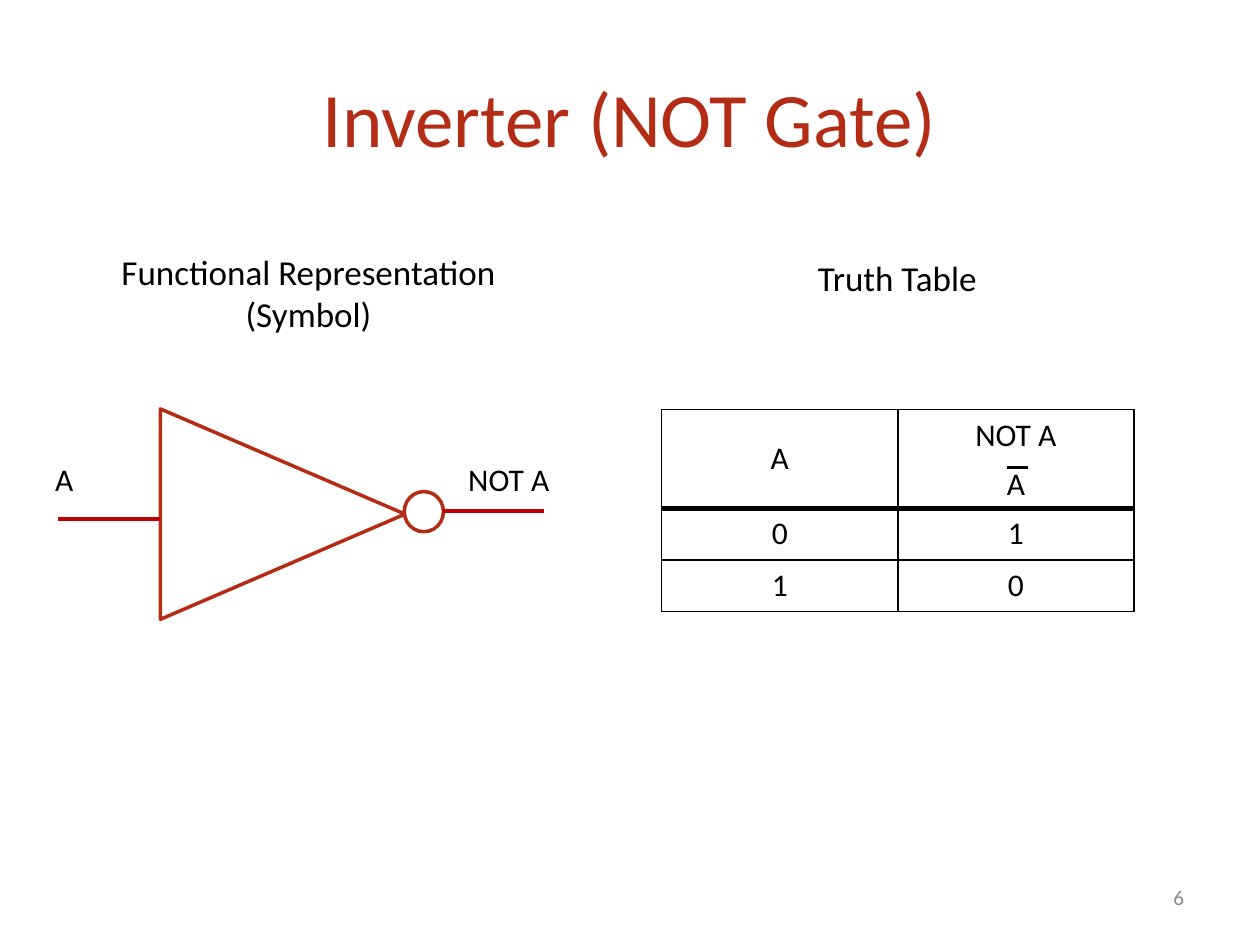
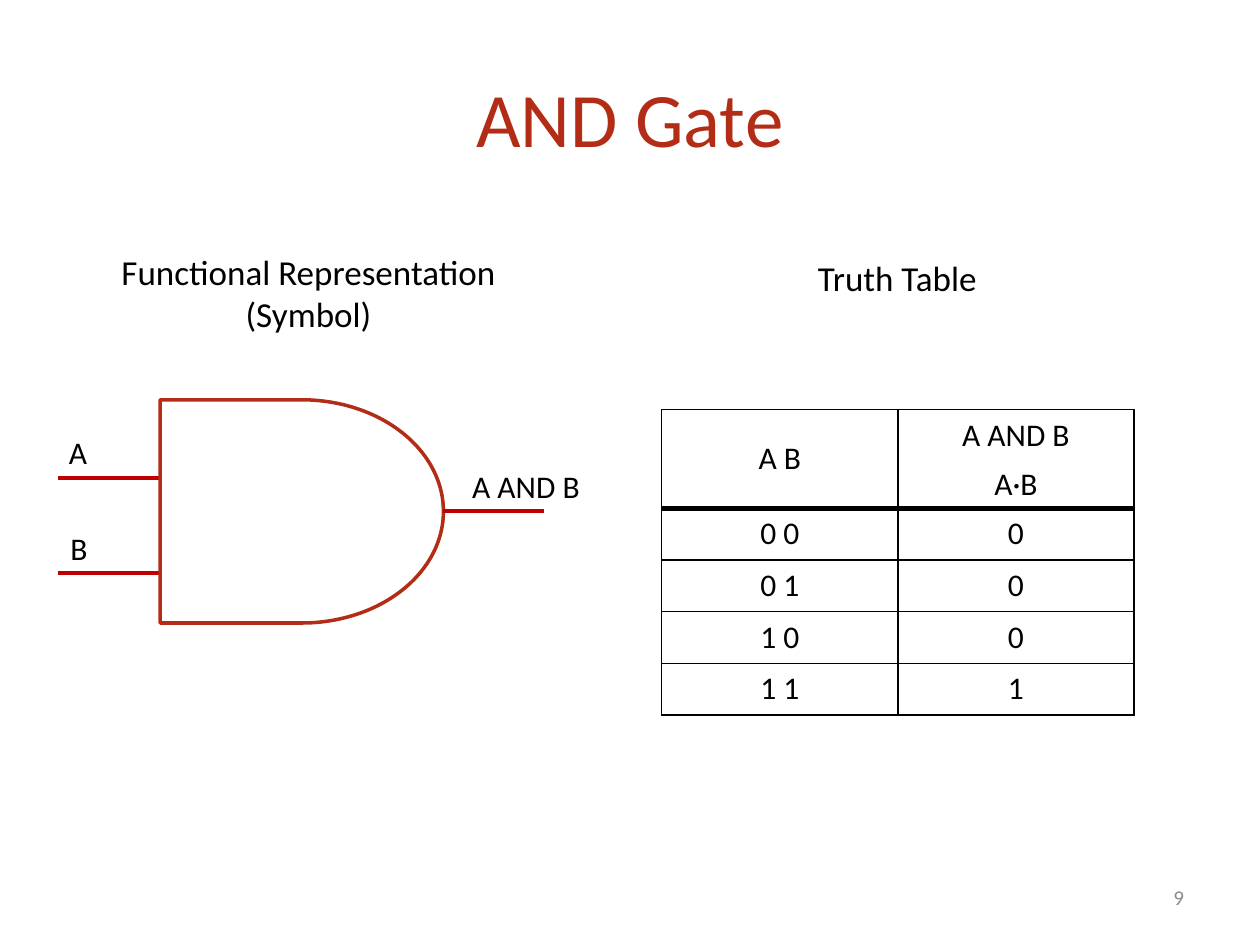
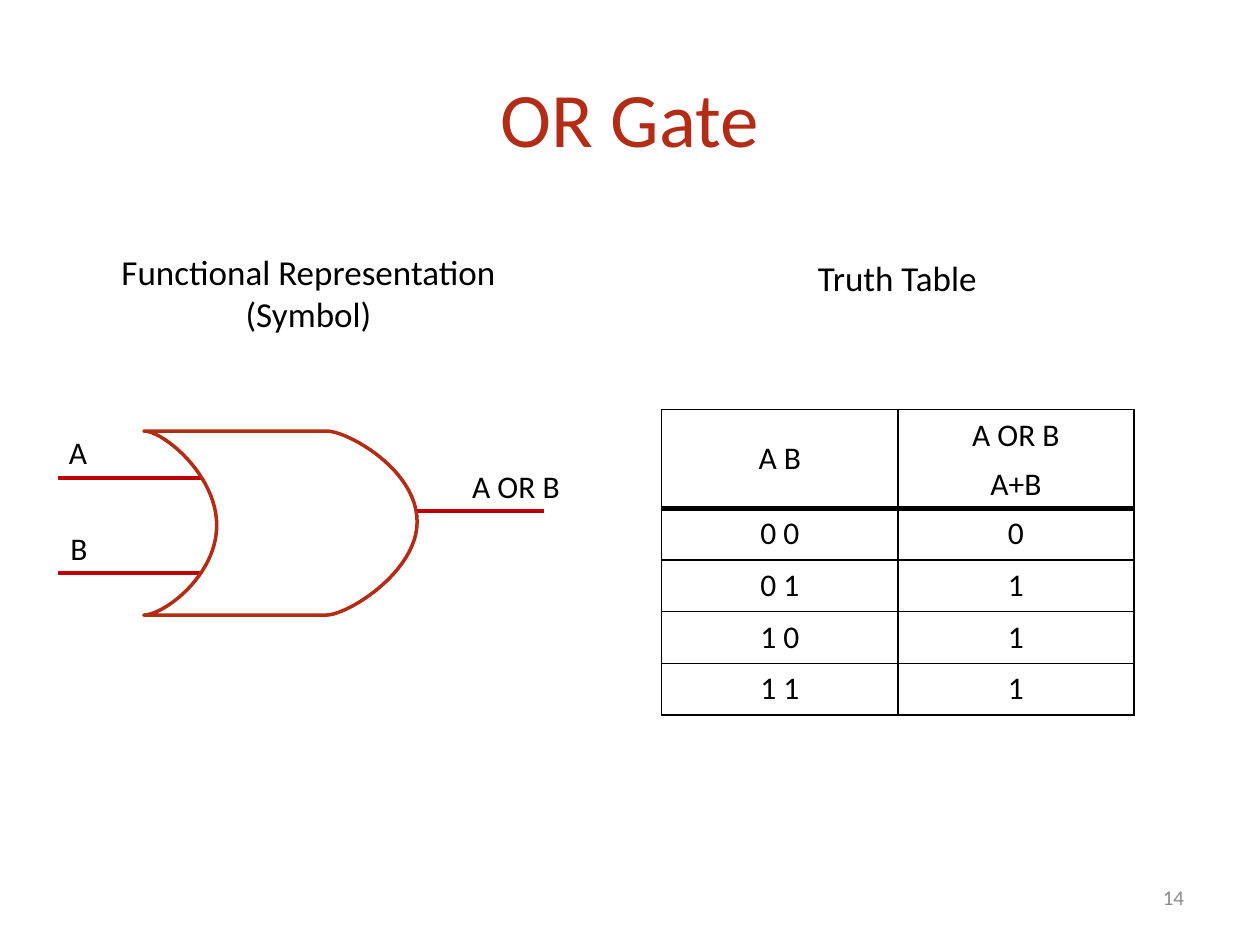
"""Build three slides that show the NOT, AND and OR gates with their truth tables."""
from lxml import etree
from pptx import Presentation
from pptx.dml.color import RGBColor
from pptx.enum.shapes import MSO_CONNECTOR, MSO_SHAPE
from pptx.enum.text import MSO_ANCHOR, PP_ALIGN
from pptx.oxml.ns import qn
from pptx.util import Cm, Pt

STRAIGHT = MSO_CONNECTOR.STRAIGHT
TRIANGLE = MSO_SHAPE.ISOSCELES_TRIANGLE
BUBBLE = MSO_SHAPE.OVAL
DELAY = MSO_SHAPE.FLOWCHART_DELAY
LEFT, CENTER, RIGHT = PP_ALIGN.LEFT, PP_ALIGN.CENTER, PP_ALIGN.RIGHT
TOP, MIDDLE = MSO_ANCHOR.TOP, MSO_ANCHOR.MIDDLE

GATE_RED = RGBColor(0xB3, 0x2C, 0x16)
WIRE_RED = RGBColor(0xC0, 0x00, 0x00)
BLACK = RGBColor(0x00, 0x00, 0x00)
WHITE = RGBColor(0xFF, 0xFF, 0xFF)
GRAY = RGBColor(0x8C, 0x8C, 0x8C)
FONT = "Calibri"

TITLE_ONLY = 5
TABLE_LEFT, TABLE_TOP = 13.34, 8.26
COLUMN_WIDTH, HEADER_HEIGHT, ROW_HEIGHT = 4.76, 1.99, 1.04
INPUT_START, BODY_LEFT = 1.17, 3.23
BODY_RIGHT, OUTPUT_END = 8.94, 10.97
OUTPUT_Y = 10.31
INPUTS = [("A", 1.14, 8.61, 9.63), ("B", 1.17, 10.54, 11.56)]
INPUT_PAIRS = ["0 0", "0 1", "1 0", "1 1"]


def format_text(frame, size, color=BLACK, align=CENTER, space_after=0):
    """Give every paragraph of a text frame the same look."""
    for paragraph in frame.paragraphs:
        paragraph.alignment = align
        paragraph.space_after = Pt(space_after)
        for run in paragraph.runs:
            run.font.name = FONT
            run.font.size = Pt(size)
            run.font.color.rgb = color


def add_label(slide, text, left, top, width, height=1.01, size=18,
              color=BLACK, align=LEFT, anchor=TOP):
    """Add a wrapped text box."""
    frame = slide.shapes.add_textbox(Cm(left), Cm(top), Cm(width), Cm(height)).text_frame
    frame.word_wrap = True
    frame.vertical_anchor = anchor
    frame.text = text
    format_text(frame, size, color, align)


def add_line(slide, start, end, y, color=WIRE_RED, weight=2.25):
    """Add a horizontal line without a shadow."""
    line = slide.shapes.add_connector(STRAIGHT, Cm(start), Cm(y), Cm(end), Cm(y))
    line.line.color.rgb = color
    line.line.width = Pt(weight)
    etree.SubElement(line._element.spPr, qn("a:effectLst"))
    return line


def style_gate(part):
    """Give a gate part its white fill and red outline."""
    part.shadow.inherit = False
    part.fill.solid()
    part.fill.fore_color.rgb = WHITE
    part.line.color.rgb = GATE_RED
    part.line.width = Pt(2)


def add_gate_part(slide, kind, left, top, width, height):
    """Add a preset shape as part of a gate symbol."""
    part = slide.shapes.add_shape(kind, Cm(left), Cm(top), Cm(width), Cm(height))
    style_gate(part)
    return part


def curve(p0, p1, p2, p3, steps=24):
    """Return points along a cubic curve, without its first point."""
    points = []
    for step in range(1, steps + 1):
        t = step / steps
        weights = ((1 - t) ** 3, 3 * t * (1 - t) ** 2, 3 * t ** 2 * (1 - t), t ** 3)
        points.append(tuple(
            Cm(sum(w * p[axis] for w, p in zip(weights, (p0, p1, p2, p3))))
            for axis in (0, 1)))
    return points


def set_borders(cell, top, bottom):
    """Draw black cell borders, with the top and bottom weights given in points."""
    properties = cell._tc.get_or_add_tcPr()
    for side, weight in (("L", 1), ("R", 1), ("T", top), ("B", bottom)):
        border = etree.SubElement(properties, qn(f"a:ln{side}"), w=str(Pt(weight)))
        fill = etree.SubElement(border, qn("a:solidFill"))
        etree.SubElement(fill, qn("a:srgbClr"), val=str(BLACK))


def add_truth_table(slide, header, rows):
    """Add a truth table with a heavy rule under its header."""
    height = HEADER_HEIGHT + ROW_HEIGHT * len(rows)
    table = slide.shapes.add_table(
        len(rows) + 1, 2, Cm(TABLE_LEFT), Cm(TABLE_TOP),
        Cm(2 * COLUMN_WIDTH), Cm(height)).table
    table.horz_banding = False
    for column in table.columns:
        column.width = Cm(COLUMN_WIDTH)
    for index, values in enumerate([header, *rows]):
        is_header = index == 0
        table.rows[index].height = Cm(HEADER_HEIGHT if is_header else ROW_HEIGHT)
        for cell, value in zip(table.rows[index].cells, values):
            cell.text_frame.text = value
            format_text(cell.text_frame, 18, space_after=6 if is_header else 0)
            for paragraph in cell.text_frame.paragraphs:
                for run in paragraph.runs:
                    run.font.bold = False
            set_borders(cell, 3 if index == 1 else 1, 3 if is_header else 1)
            cell.fill.background()
    table.cell(0, 0).vertical_anchor = MIDDLE


def add_gate_slide(prs, title, number, header, rows):
    """Add a slide with its title, number, headings and truth table."""
    slide = prs.slides.add_slide(prs.slide_layouts[TITLE_ONLY])
    heading = slide.shapes.title
    heading.left, heading.top = Cm(1.27), Cm(0.76)
    heading.width, heading.height = Cm(22.86), Cm(3.18)
    heading.text_frame.text = title
    heading.text_frame.vertical_anchor = MIDDLE
    format_text(heading.text_frame, 44, GATE_RED)
    add_label(slide, number, 18.2, 17.58, 5.92, size=12, color=GRAY,
              align=RIGHT, anchor=MIDDLE)
    add_label(slide, "Functional Representation\n(Symbol)", 1.47, 4.93, 9.5, 1.96,
              size=20, align=CENTER)
    add_label(slide, "Truth Table", 13.34, 5.05, 9.5, 1.12, size=20, align=CENTER)
    add_truth_table(slide, header, rows)
    return slide


def add_inputs(slide, end):
    """Add the two labelled input wires A and B."""
    for name, left, top, wire_y in INPUTS:
        add_line(slide, INPUT_START, end, wire_y)
        add_label(slide, name, left, top, 1.75)


def draw_not_gate(slide):
    """Draw the inverter symbol and the bar over A in the table."""
    add_gate_part(slide, TRIANGLE, 3.58, 7.9, 4.24, 4.93).rotation = 90
    add_gate_part(slide, BUBBLE, 8.15, 9.91, 0.79, 0.81)
    add_line(slide, INPUT_START, BODY_LEFT, 10.46)
    add_line(slide, BODY_RIGHT, OUTPUT_END, OUTPUT_Y)
    add_line(slide, 20.29, 20.73, 9.42, BLACK, 1.5)
    add_label(slide, "A", 0.86, 9.14, 1.75)
    add_label(slide, "NOT A", 9.19, 9.14, 2.74)


def draw_and_gate(slide):
    """Draw the AND symbol."""
    height = 4.5
    add_inputs(slide, BODY_LEFT)
    body = add_gate_part(slide, DELAY, BODY_LEFT, OUTPUT_Y - height / 2,
                         BODY_RIGHT - BODY_LEFT, height)
    add_line(slide, BODY_RIGHT, OUTPUT_END, OUTPUT_Y).begin_connect(body, 3)
    add_label(slide, "A AND B", 9.27, 9.3, 3.02)


def draw_or_gate(slide):
    """Draw the OR symbol."""
    back, shoulder, tip = 2.9, 6.58, 8.41
    top, bottom = 8.69, 12.4
    hollow, nose = (4.37, 10.59), (tip, 10.52)
    add_inputs(slide, 4.11)
    add_line(slide, tip, OUTPUT_END, OUTPUT_Y)
    add_label(slide, "A OR B", 9.27, 9.3, 3.02)
    outline = slide.shapes.build_freeform(Cm(shoulder), Cm(top))
    outline.add_line_segments([
        (Cm(back), Cm(top)),
        *curve((back, top), (3.3, top), (4.37, 9.58), hollow),
        *curve(hollow, (4.37, 11.61), (3.3, bottom), (back, bottom)),
        (Cm(shoulder), Cm(bottom)),
        *curve((shoulder, bottom), (7.01, bottom), (tip, 11.53), nose),
        *curve(nose, (tip, 9.47), (7.01, top), (shoulder, top)),
    ], close=True)
    style_gate(outline.convert_to_shape())


def main():
    """Build and save the presentation."""
    prs = Presentation()
    prs.slide_width, prs.slide_height = Cm(25.4), Cm(19.05)
    draw_not_gate(add_gate_slide(
        prs, "Inverter (NOT Gate)", "6", ("A", "NOT A\nA"), [("0", "1"), ("1", "0")]))
    draw_and_gate(add_gate_slide(
        prs, "AND Gate", "9", ("A B", "A AND B\nA·B"), list(zip(INPUT_PAIRS, "0001"))))
    draw_or_gate(add_gate_slide(
        prs, "OR Gate", "14", ("A B", "A OR B\nA+B"), list(zip(INPUT_PAIRS, "0111"))))
    prs.save("out.pptx")


if __name__ == "__main__":
    main()
